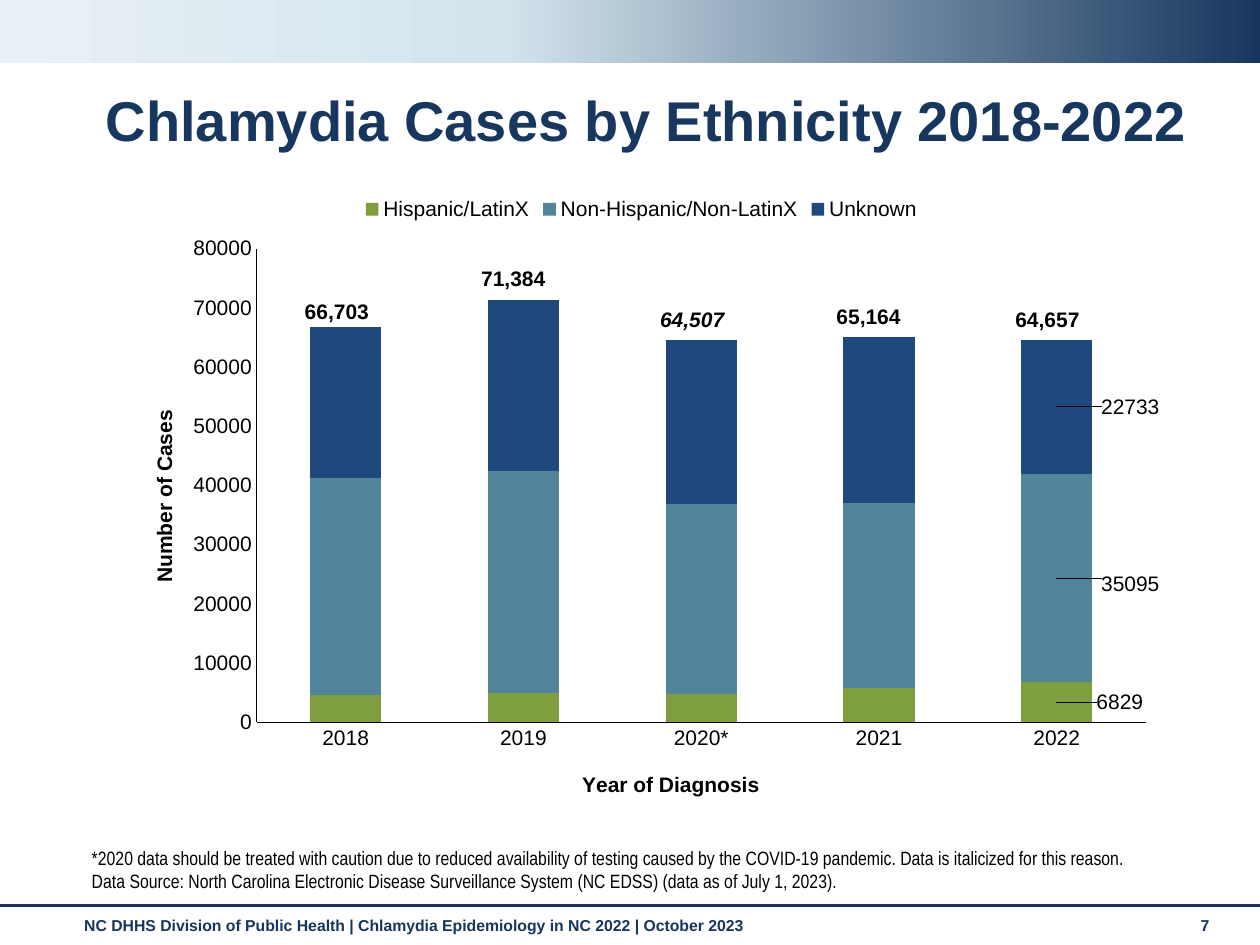
from copy import deepcopy
from typing import NamedTuple

from lxml.etree import SubElement
from pptx import Presentation
from pptx.chart.data import CategoryChartData
from pptx.dml.color import RGBColor
from pptx.enum.chart import XL_CHART_TYPE as ChartType
from pptx.enum.chart import XL_LABEL_POSITION as LabelPosition
from pptx.enum.chart import XL_LEGEND_POSITION as LegendPosition
from pptx.enum.chart import XL_TICK_MARK as TickMark
from pptx.enum.shapes import MSO_CONNECTOR as Connector
from pptx.enum.shapes import MSO_SHAPE as Shape
from pptx.enum.text import MSO_ANCHOR as Anchor
from pptx.enum.text import PP_ALIGN as Align
from pptx.oxml import parse_xml
from pptx.oxml.ns import nsdecls, qn
from pptx.util import Inches, Pt

NAVY = RGBColor(0x17, 0x37, 0x5E)
FOOTER_NAVY = RGBColor(0x15, 0x36, 0x5E)
PALE_BLUE = RGBColor(0xD3, 0xE4, 0xED)
ICE = RGBColor(0xE9, 0xF1, 0xF6)
BLACK = RGBColor(0, 0, 0)
GREEN = RGBColor(0x7F, 0x9E, 0x3F)
TEAL = RGBColor(0x52, 0x84, 0x9C)
BLUE = RGBColor(0x1F, 0x49, 0x7D)


class Group(NamedTuple):
    name: str
    values: tuple
    color: RGBColor
    label_shift: tuple  # fraction of the chart's width and height


class Total(NamedTuple):
    text: str
    left: float
    top: float
    italic: bool = False


YEARS = ("2018", "2019", "2020*", "2021", "2022")
GROUPS = (
    Group("Hispanic/LatinX", (4545, 5034, 4758, 5715, 6829), GREEN, (0.06, 0)),
    Group("Non-Hispanic/Non-LatinX", (36781, 37459, 32041, 31385, 35095), TEAL, (0.07, 0.01)),
    Group("Unknown", (25377, 28891, 27708, 28064, 22733), BLUE, (0.07, 0)),
)
TOTALS = (
    Total("66,703", 2.32, 2.32),
    Total("71,384", 3.72, 2.06),
    Total("64,507", 5.14, 2.38, italic=True),
    Total("65,164", 6.54, 2.36),
    Total("64,657", 7.96, 2.38),
)


def format_font(font, size: float, color=BLACK, name="Arial", bold=False, italic=False):
    font.size, font.name = Pt(size), name
    font.bold, font.italic = bold, italic
    font.color.rgb = color


def write_text(frame, text: str, anchor=Anchor.TOP, spacing=None, **style):
    frame.word_wrap = True
    frame.vertical_anchor = anchor
    for index, line in enumerate(text.split("\n")):
        para = frame.paragraphs[0] if index == 0 else frame.add_paragraph()
        para.alignment = Align.LEFT
        para.line_spacing = spacing
        span = para.add_run()
        span.text = line
        format_font(span.font, **style)


def add_text(page, text: str, left, top, width, height, **style):
    box = page.shapes.add_textbox(Inches(left), Inches(top), Inches(width), Inches(height))
    write_text(box.text_frame, text, **style)


def make_layout(**places):
    """Return a manual chart layout holding the given places."""
    layout = parse_xml(f"<c:layout {nsdecls('c')}/>")
    manual = SubElement(layout, qn("c:manualLayout"))
    for tag, value in places.items():
        SubElement(manual, qn(f"c:{tag}")).set("val", str(value))
    return layout


def format_axis(axis, title: str, left: float, top: float):
    axis.major_tick_mark = axis.minor_tick_mark = TickMark.NONE
    axis.has_major_gridlines = False
    format_font(axis.tick_labels.font, 12)
    axis.format.line.color.rgb = BLACK
    axis.format.line.width = Pt(0.75)
    frame = axis.axis_title.text_frame
    frame.text = title
    format_font(frame.paragraphs[0].runs[0].font, 12, bold=True)
    element = axis.axis_title._element
    for old in element.findall(qn("c:layout")):
        element.remove(old)
    element.find(qn("c:tx")).addnext(make_layout(xMode="edge", yMode="edge", x=left, y=top))


def add_cases_chart(page):
    data = CategoryChartData()
    data.categories = YEARS
    for group in GROUPS:
        data.add_series(group.name, group.values)
    chart = page.shapes.add_chart(
        ChartType.COLUMN_STACKED, Inches(0.92), Inches(1.46), Inches(8.34), Inches(5.04), data
    ).chart
    format_font(chart.font, 10)
    chart.has_title = False
    chart.has_legend = True
    chart.legend.position = LegendPosition.TOP
    chart.legend.include_in_layout = False
    format_font(chart.legend.font, 12)

    format_axis(chart.category_axis, "Year of Diagnosis", 0.44, 0.92)
    format_axis(chart.value_axis, "Number of Cases", 0.03, 0.35)
    chart.value_axis.minimum_scale, chart.value_axis.maximum_scale = 0, 80000
    chart.value_axis.major_unit = 10000

    plot = chart.plots[0]
    plot.gap_width, plot.overlap, plot.vary_by_categories = 150, 100, False
    area = plot._element.getparent()
    for old in area.findall(qn("c:layout")):
        area.remove(old)
    area.insert(0, make_layout(layoutTarget="inner", xMode="edge", yMode="edge",
                               x=0.134, y=0.102, w=0.846, h=0.746))

    # Only the last year is labelled, to the right of its column
    for series, group in zip(plot.series, GROUPS):
        series.format.fill.solid()
        series.format.fill.fore_color.rgb = group.color
        series.data_labels.show_value = False
        label = series.points[len(YEARS) - 1].data_label
        format_font(label.font, 12)
        label.position = LabelPosition.CENTER
        shift_x, shift_y = group.label_shift
        element = series.data_labels._element.find(qn("c:dLbl"))
        element.find(qn("c:idx")).addnext(make_layout(x=shift_x, y=shift_y))


def add_band(page):
    band = page.shapes.add_shape(Shape.RECTANGLE, 0, 0, Inches(10), Inches(0.5))
    band.shadow.inherit = False
    band.line.fill.background()
    band.fill.gradient()
    band.fill.gradient_angle = 180
    stops = band._element.spPr.find(qn("a:gradFill")).find(qn("a:gsLst"))
    stops.append(deepcopy(stops[-1]))
    colors = ((0, NAVY), (0.6, PALE_BLUE), (1, ICE))
    for stop, (position, color) in zip(band.fill.gradient_stops, colors):
        stop.position = position
        stop.color.rgb = color


def add_footer(page):
    rule = page.shapes.add_connector(
        Connector.STRAIGHT, 0, Inches(7.19), Inches(10), Inches(7.19))
    rule.line.color.rgb = NAVY
    rule.line.width = Pt(1.75)
    SubElement(rule._element.spPr, qn("a:effectLst"))
    style = dict(size=9, color=FOOTER_NAVY, bold=True)
    add_text(page, "NC DHHS Division of Public Health | Chlamydia Epidemiology in NC 2022 | October 2023",
             0.57, 7.22, 8.74, 0.29, **style)
    add_text(page, "7", 9.43, 7.22, 0.44, 0.3, **style)


def main():
    deck = Presentation()
    deck.slide_width, deck.slide_height = Inches(10), Inches(7.5)
    page = deck.slides.add_slide(deck.slide_layouts[5])

    add_band(page)
    add_footer(page)

    # Title
    title = page.shapes.title
    title.left, title.top = Inches(0.74), Inches(0.68)
    title.width, title.height = Inches(9.11), Inches(0.6)
    write_text(title.text_frame, "Chlamydia Cases by Ethnicity 2018-2022",
               anchor=Anchor.MIDDLE, spacing=0.9, size=32, color=NAVY, bold=True)

    # Notes below the chart
    add_text(page, "*2020 data should be treated with caution due to reduced availability of testing "
             "caused by the COVID-19 pandemic. Data is italicized for this reason.\n"
             "Data Source: North Carolina Electronic Disease Surveillance System (NC EDSS) "
             "(data as of July 1, 2023).",
             0.63, 6.5, 8.74, 0.63, anchor=Anchor.BOTTOM, size=11, name="Arial Narrow")

    # Chart with the yearly totals above its columns
    add_cases_chart(page)
    for total in TOTALS:
        add_text(page, total.text, total.left, total.top, 0.72, 0.3,
                 size=12, bold=True, italic=total.italic)

    deck.save("out.pptx")


if __name__ == "__main__":
    main()
